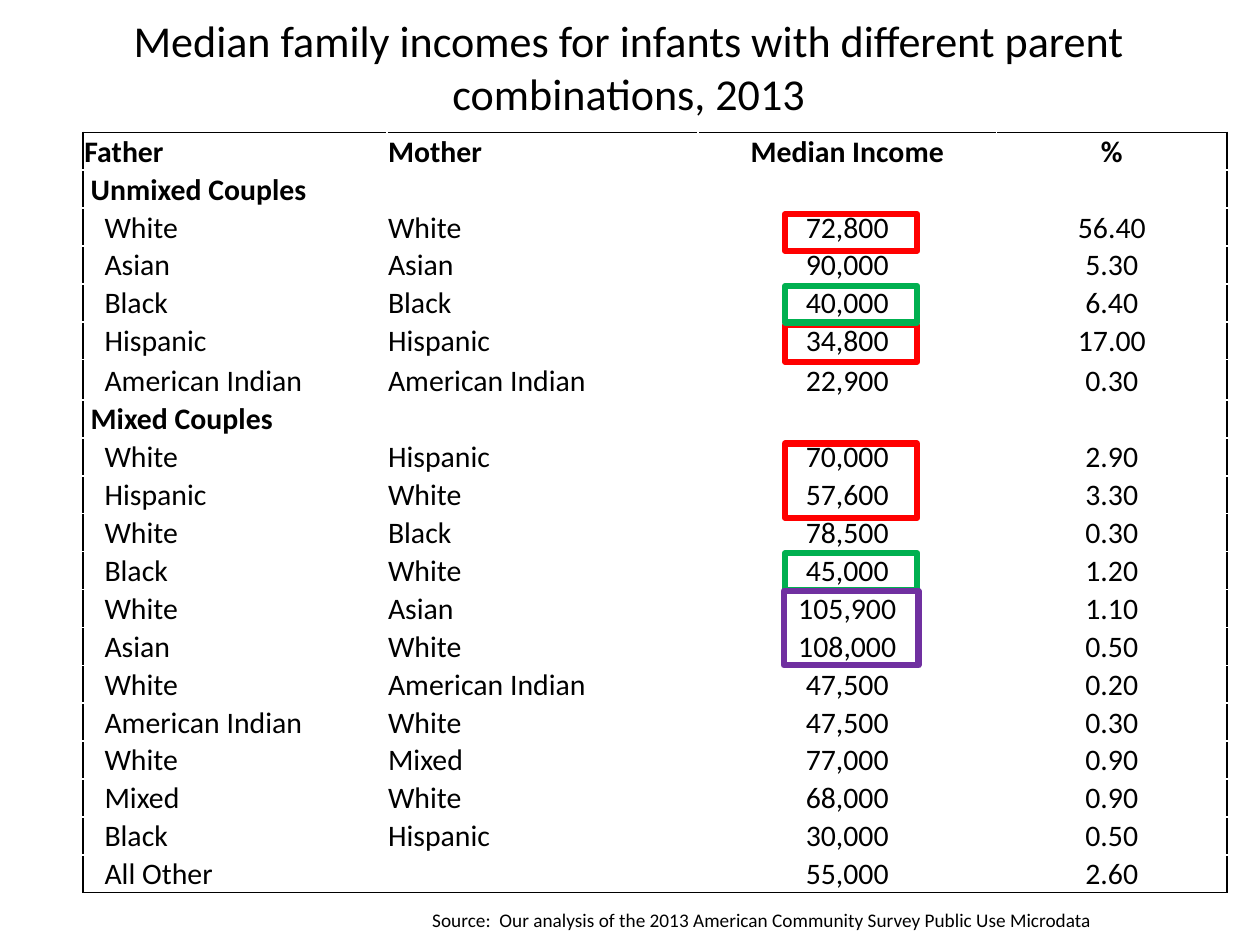
from lxml.etree import SubElement
from pptx import Presentation
from pptx.dml.color import RGBColor as RGB
from pptx.enum.shapes import MSO_SHAPE as SHAPE
from pptx.enum.text import MSO_ANCHOR as ANCHOR, PP_ALIGN as ALIGN
from pptx.oxml.ns import qn
from pptx.util import Inches, Pt

COLORS = {"black": "000000", "white": "FFFFFF", "red": "FF0000",
          "green": "00B050", "purple": "7030A0"}
ROWS = [
    ("Father", "Mother", "Median Income", "%"),
    ("Unmixed Couples", "", "", ""),
    ("White", "White", "72,800", "56.40"),
    ("Asian", "Asian", "90,000", "5.30"),
    ("Black", "Black", "40,000", "6.40"),
    ("Hispanic", "Hispanic", "34,800", "17.00"),
    ("American Indian", "American Indian", "22,900", "0.30"),
    ("Mixed Couples", "", "", ""),
    ("White", "Hispanic", "70,000", "2.90"),
    ("Hispanic", "White", "57,600", "3.30"),
    ("White", "Black", "78,500", "0.30"),
    ("Black", "White", "45,000", "1.20"),
    ("White", "Asian", "105,900", "1.10"),
    ("Asian", "White", "108,000", "0.50"),
    ("White", "American Indian", "47,500", "0.20"),
    ("American Indian", "White", "47,500", "0.30"),
    ("White", "Mixed", "77,000", "0.90"),
    ("Mixed", "White", "68,000", "0.90"),
    ("Black", "Hispanic", "30,000", "0.50"),
    ("All Other", "", "55,000", "2.60"),
]
SECTIONS = (1, 7)
LAST = len(ROWS) - 1


def set_font(p, size, bold=False):
    p.font.name = "Calibri"
    p.font.size = Pt(size)
    p.font.bold = bold
    p.font.color.rgb = RGB.from_string(COLORS["black"])


def add_border(cell, side):
    ln = SubElement(cell._tc.get_or_add_tcPr(), qn("a:ln" + side), w=str(Pt(1)))
    fill = SubElement(ln, qn("a:solidFill"))
    SubElement(fill, qn("a:srgbClr"), val=COLORS["black"])


prs = Presentation()
prs.slide_width, prs.slide_height = Inches(10), Inches(7.5)
s = prs.slides.add_slide(prs.slide_layouts[5])

title = s.shapes.title
title.left, title.top = Inches(0.49), Inches(0.11)
title.width, title.height = Inches(9), Inches(0.92)
tf = title.text_frame
tf.text = "Median family incomes for infants with different parent combinations, 2013"
tf.vertical_anchor = ANCHOR.TOP
tf.margin_top = tf.margin_bottom = 0
p = tf.paragraphs[0]
p.alignment = ALIGN.CENTER
set_font(p, 25.2)

sp = s.shapes.add_textbox(Inches(3.36), Inches(7.17), Inches(6.21), Inches(0.26))
tf = sp.text_frame
tf.word_wrap = True
tf.margin_left = tf.margin_right = Inches(0.07)
tf.margin_top = tf.margin_bottom = Inches(0.04)
tf.text = "Source:  Our analysis of the 2013 American Community Survey Public Use Microdata"
set_font(tf.paragraphs[0], 11)

table = s.shapes.add_table(len(ROWS), 4, Inches(0.66), Inches(1.05),
                           Inches(9.08), Inches(6.04)).table
table.first_row = table.horz_banding = False
for col, width in zip(table.columns, (2.41, 2.47, 2.37, 1.83)):
    col.width = Inches(width)
for row in table.rows:
    row.height = Inches((6.04 - 0.32) / LAST)
table.rows[6].height = Inches(0.32)
table.cell(1, 0).merge(table.cell(1, 1))

for i, row in enumerate(ROWS):
    for j, text in enumerate(row):
        cell = table.cell(i, j)
        for side, wanted in (("L", j == 0), ("R", j == 3),
                             ("T", i == 0), ("B", i in (0, LAST))):
            if wanted:
                add_border(cell, side)
        cell.fill.solid()
        cell.fill.fore_color.rgb = RGB.from_string(COLORS["white"])
        cell.vertical_anchor = ANCHOR.BOTTOM
        cell.margin_left = cell.margin_right = cell.margin_top = Inches(0.01)
        cell.margin_bottom = 0
        if j == 0 and i > 0:
            cell.margin_left = Inches(0.06 if i in SECTIONS else 0.17)
        p = cell.text_frame.paragraphs[0]
        p.alignment = ALIGN.CENTER if j > 1 else ALIGN.LEFT
        set_font(p, 17, i == 0 or i in SECTIONS)
        if text:
            p.add_run().text = text
        else:
            SubElement(p._p, qn("a:endParaRPr"), sz="1700")

for color, left, top, width, height in (
    ("red", 6.23, 3.52, 1.05, 0.59),
    ("red", 6.23, 1.7, 1.05, 0.29),
    ("red", 6.23, 2.58, 1.05, 0.29),
    ("green", 6.23, 4.39, 1.05, 0.29),
    ("green", 6.23, 2.27, 1.05, 0.29),
    ("purple", 6.22, 4.69, 1.07, 0.59),
):
    sp = s.shapes.add_shape(SHAPE.RECTANGLE, Inches(left), Inches(top),
                            Inches(width), Inches(height))
    sp.shadow.inherit = False
    sp.fill.background()
    sp.line.color.rgb = RGB.from_string(COLORS[color])
    sp.line.width = Pt(3.5)

prs.save("out.pptx")
